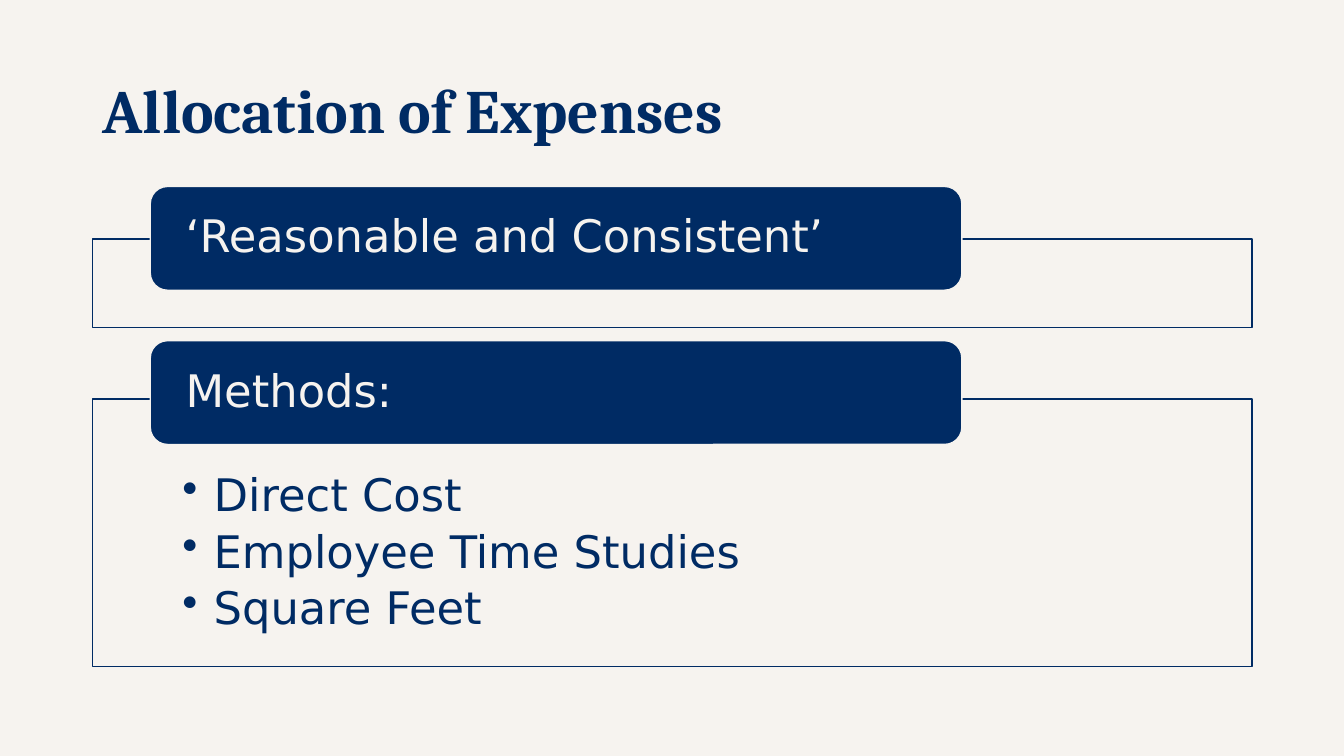
import pptx
import pptx.util
import pptx.dml.color
import pptx.enum.shapes
import pptx.enum.text
import pptx.oxml
import pptx.oxml.ns
from dataclasses import dataclass

Inches = pptx.util.Inches
Pt = pptx.util.Pt
SHAPE = pptx.enum.shapes.MSO_SHAPE
ANCHOR = pptx.enum.text.MSO_ANCHOR


@dataclass(frozen=True)
class Theme:
    navy = pptx.dml.color.RGBColor.from_string("002B64")
    cream = pptx.dml.color.RGBColor.from_string("F6F3EF")
    title_font = "Cambria"
    body_font = "DejaVu Sans"
    title_size = Pt(44)
    body_size = Pt(32)


theme = Theme()


def write(sp, lines, font=theme.body_font, size=theme.body_size, color=theme.navy,
          bold=False, anchor=ANCHOR.MIDDLE, insets=(0.1, 0.05, 0.1, 0.05),
          bullet=False, after=0):
    tf = sp.text_frame
    tf.word_wrap = True
    tf.vertical_anchor = anchor
    tf.margin_left, tf.margin_top, tf.margin_right, tf.margin_bottom = map(Inches, insets)
    for i, line in enumerate(lines):
        p = tf.paragraphs[0] if i == 0 else tf.add_paragraph()
        p.alignment = pptx.enum.text.PP_ALIGN.LEFT
        p.line_spacing = 0.9
        p.space_after = Pt(after)
        if bullet:
            pPr = p._p.get_or_add_pPr()
            pPr.set("marL", str(Inches(0.31)))
            pPr.set("indent", str(-Inches(0.31)))
            bu = pptx.oxml.parse_xml(
                f'<a:buChar {pptx.oxml.ns.nsdecls("a")} char="•"/>')
            pPr.append(bu)
        r = p.add_run()
        r.text = line
        r.font.name = font
        r.font.size = size
        r.font.bold = bold
        r.font.color.rgb = color


def add_box(kind, left, top, width, height, fill, line):
    sp = s.shapes.add_shape(kind, Inches(left), Inches(top), Inches(width), Inches(height))
    sp.shadow.inherit = False
    sp.fill.solid()
    sp.fill.fore_color.rgb = fill
    sp.line.color.rgb = line
    sp.line.width = Pt(1)
    return sp


prs = pptx.Presentation()
prs.slide_width = Inches(13.33)
prs.slide_height = Inches(7.5)
s = prs.slides.add_slide(prs.slide_layouts[6])
s.background.fill.solid()
s.background.fill.fore_color.rgb = theme.cream

left, width = 0.92, 11.5
title = s.shapes.add_textbox(Inches(left), Inches(0.4), Inches(width), Inches(1.45))
write(title, ["Allocation of Expenses"], font=theme.title_font,
      size=theme.title_size, bold=True)

# Heading, heading top, frame top, frame height, bullets
sections = [
    ("‘Reasonable and Consistent’", 1.85, 2.37, 0.88, []),
    ("Methods:", 3.38, 3.96, 2.65,
     ["Direct Cost", "Employee Time Studies", "Square Feet"]),
]
for heading, heading_top, frame_top, frame_height, bullets in sections:
    frame = add_box(SHAPE.RECTANGLE, left, frame_top, width, frame_height,
                    theme.cream, theme.navy)
    write(frame, bullets, anchor=ANCHOR.TOP, insets=(0.89, 0.73, 0.89, 0.25),
          bullet=True, after=5.8)
    label = add_box(SHAPE.ROUNDED_RECTANGLE, 1.49, heading_top, 8.05, 1.03,
                    theme.navy, theme.cream)
    write(label, [heading], color=theme.cream, insets=(0.3, 0, 0.3, 0))

prs.save("out.pptx")
